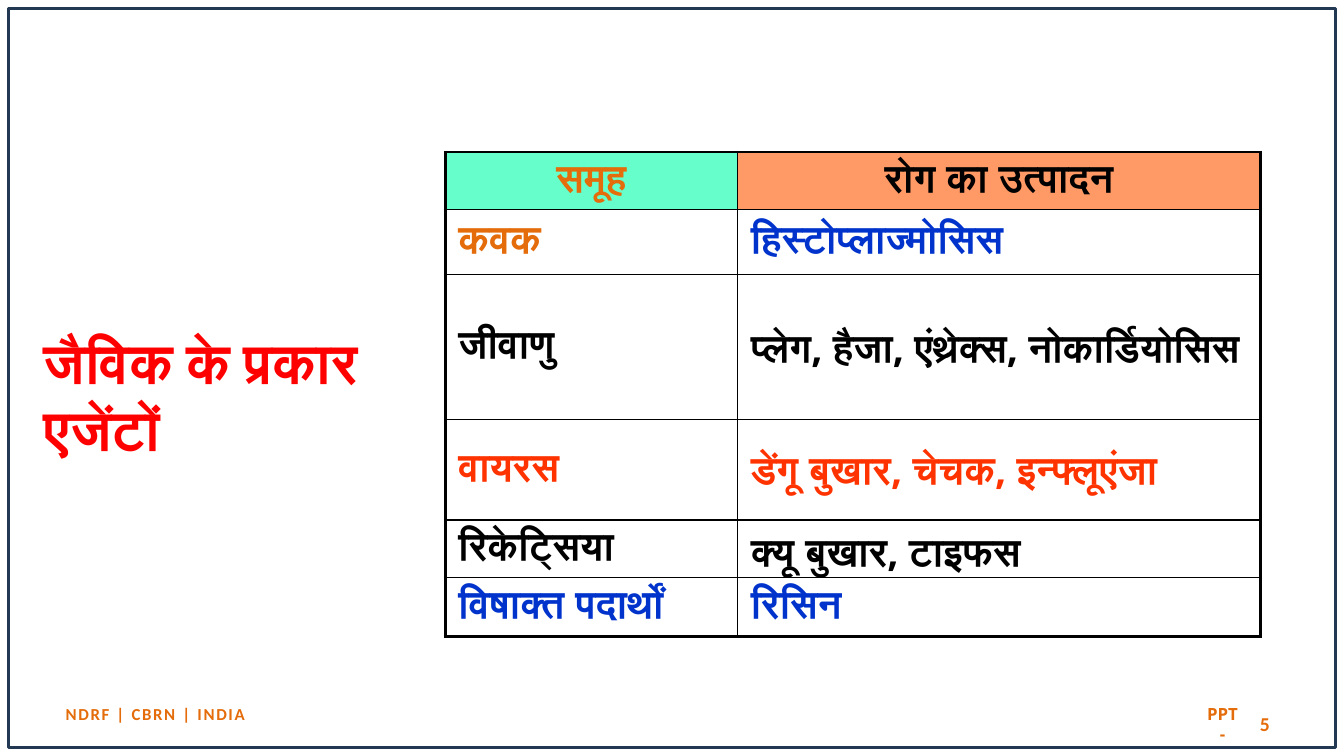
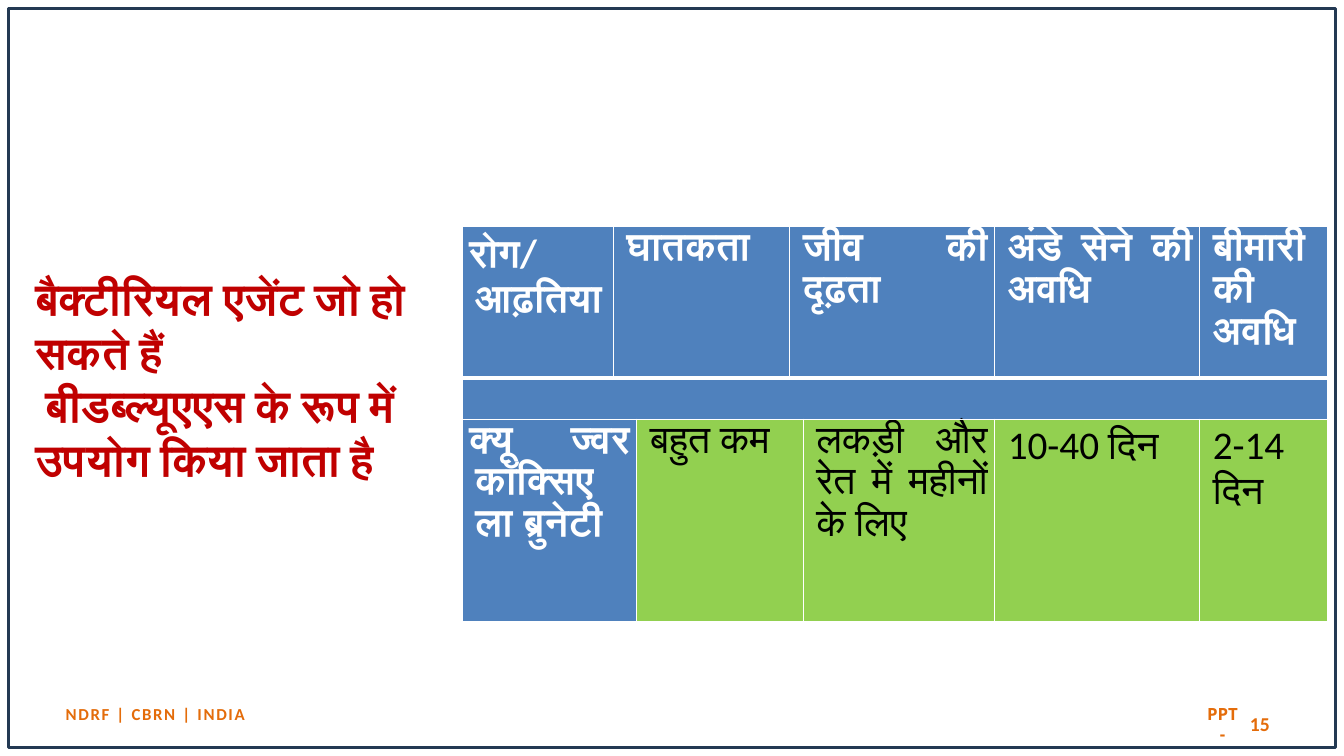
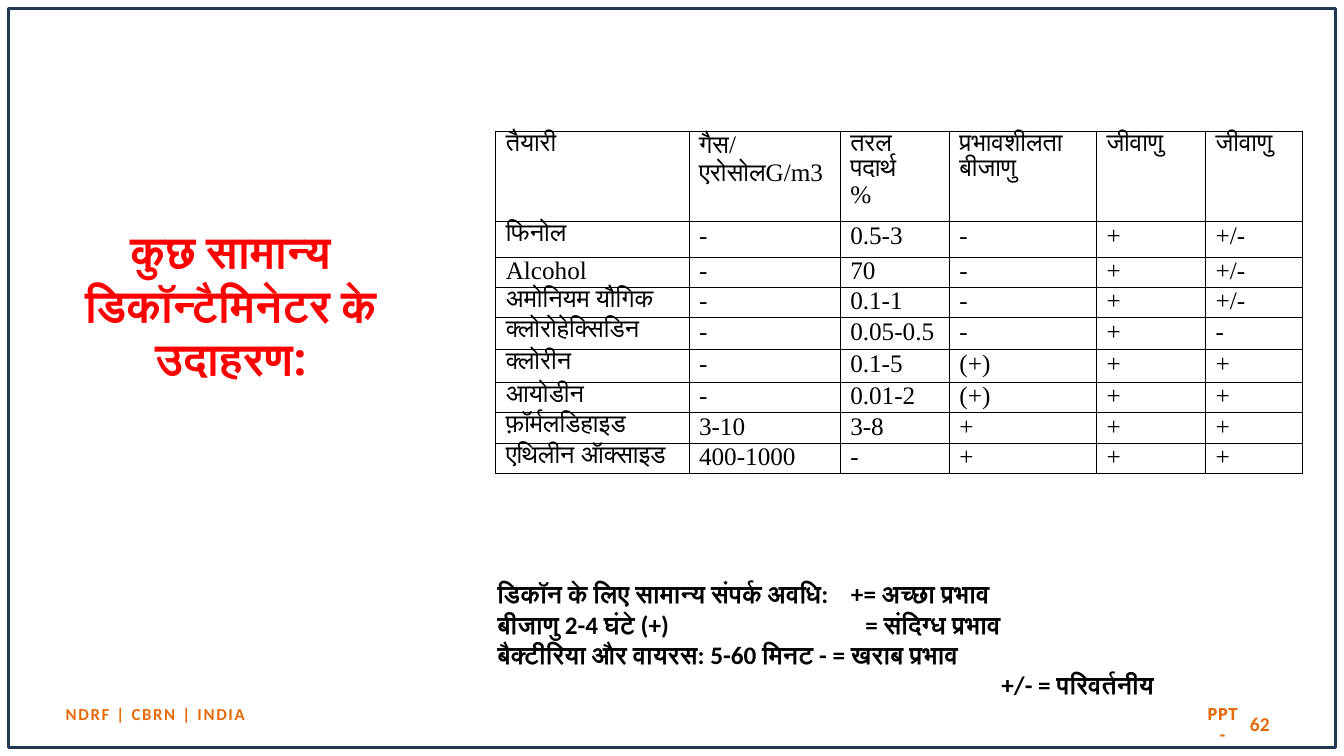
from itertools import product

from lxml import etree
from pptx import Presentation
from pptx import util as u
from pptx.dml.color import RGBColor
from pptx.enum import shapes, text
from pptx.oxml.ns import qn

BLACK = RGBColor(0x00, 0x00, 0x00)
WHITE = RGBColor(0xFF, 0xFF, 0xFF)
NAVY = RGBColor(0x23, 0x39, 0x53)
ORANGE = RGBColor(0xE4, 0x6C, 0x0A)
RED = RGBColor(0xFF, 0x00, 0x00)
MAROON = RGBColor(0xC0, 0x00, 0x00)
SCARLET = RGBColor(0xFF, 0x33, 0x00)
ROYAL = RGBColor(0x00, 0x33, 0xCC)
STEEL = RGBColor(0x4F, 0x81, 0xBD)
LIME = RGBColor(0x92, 0xD0, 0x50)
MINT = RGBColor(0x66, 0xFF, 0xCC)
PEACH = RGBColor(0xFF, 0x99, 0x66)
SANS, BODY, SERIF = "Open Sans", "Calibri", "Times New Roman"
LEFT, MID, RIGHT, JUST = (text.PP_ALIGN.LEFT, text.PP_ALIGN.CENTER,
                          text.PP_ALIGN.RIGHT, text.PP_ALIGN.JUSTIFY)
CENTRE = text.MSO_ANCHOR.MIDDLE

deck = Presentation()
deck.slide_width, deck.slide_height = u.Inches(13.33), u.Inches(7.5)
UNIT = deck.slide_height / 90  # the slide is a grid of 160 by 90 units


def write(para, words, size, ink, font, bold=True, align=LEFT, asian=None):
    """Fill a paragraph; a newline in words becomes a line break."""
    para.alignment = align
    for i, part in enumerate(words.split("\n")):
        if i:
            para.add_line_break()
        run = para.add_run()
        run.text = part
        run.font.size, run.font.bold = u.Pt(size), bold
        run.font.name, run.font.color.rgb = font, ink
        if asian:
            etree.SubElement(run.font._element, qn("a:cs"), typeface=asian)
    return para


def grid(page, left, top, cols, rows, ink, rims):
    """Add a bare table; rims(row, col) gives left, right, top, bottom widths."""
    box = [round(n * UNIT) for n in (left, top, sum(cols), sum(rows))]
    table = page.shapes.add_table(len(rows), len(cols), *box).table
    table.first_row = table.horz_banding = False
    for col, wide in zip(table.columns, cols):
        col.width = round(wide * UNIT)
    for row, high in zip(table.rows, rows):
        row.height = round(high * UNIT)
    for r, c in product(range(len(rows)), range(len(cols))):
        cell = table.cell(r, c)
        cell.fill.background()
        props = cell._tc.get_or_add_tcPr()
        for i, (side, wide) in enumerate(zip("LRTB", rims(r, c))):
            line = etree.Element(qn("a:ln" + side), w=str(u.Pt(wide)))
            fill = etree.SubElement(line, qn("a:solidFill"))
            etree.SubElement(fill, qn("a:srgbClr"), val=str(ink))
            props.insert(i, line)
    return table


# Frame, title and footer of every slide
heads = [
    ("5", "जैविक के प्रकार\nएजेंटों", (4, 32, 40, 30), 40, RED, LEFT),
    ("15", "बैक्टीरियल एजेंट जो हो सकते हैं\n बीडब्ल्यूएएस के रूप में उपयोग किया जाता है",
     (3, 25.5, 50, 39), 32, MAROON, LEFT),
    ("62", "कुछ सामान्य डिकॉन्टैमिनेटर के उदाहरण:", (1, 25.7, 53, 21), 32, RED, MID),
]
pages = []
for num, title, area, size, ink, align in heads:
    page = deck.slides.add_slide(deck.slide_layouts[6])
    pages.append(page)
    for words, place, points, tint, font, side, wrap in [
        (num, (115, 83.7, 37.3, 4.8), 14, ORANGE, BODY, RIGHT, True),
        ("NDRF | CBRN | INDIA", (2, 82.8, 33, 4.4), 12, ORANGE, BODY, MID, True),
        ("PPT -", (142, 84, 7, 4.4), 12, ORANGE, SANS, MID, False),
        (title, area, size, ink, SANS, align, True),
    ]:
        frame = page.shapes.add_textbox(*[round(n * UNIT) for n in place]).text_frame
        frame.word_wrap, frame.vertical_anchor = wrap, CENTRE
        para = write(frame.paragraphs[0], words, points, tint, font, True, side, BODY)
        if words.startswith("NDRF"):
            para.runs[0].font._element.set("spc", "120")
    rim = page.shapes.add_shape(shapes.MSO_SHAPE.RECTANGLE,
                                *[round(n * UNIT) for n in (1, 1, 158, 88)])
    rim.shadow.inherit = False
    rim.fill.background()
    rim.line.color.rgb, rim.line.width = NAVY, u.Pt(2)

# Slide 1: groups and their diseases
groups = [
    ("समूह", ORANGE, "रोग का उत्पादन", BLACK),
    ("कवक", ORANGE, "हिस्टोप्लाज्मोसिस", ROYAL),
    ("जीवाणु", BLACK, "प्लेग, हैजा, एंथ्रेक्स, नोकार्डियोसिस", BLACK),
    ("वायरस", SCARLET, "डेंगू बुखार, चेचक, इन्फ्लूएंजा", SCARLET),
    ("रिकेट्सिया", BLACK, "क्यू बुखार, टाइफस", BLACK),
    ("विषाक्त पदार्थों", ROYAL, "रिसिन", ROYAL),
]
table = grid(pages[0], 53, 18.1, [34.8, 62.2], [5.8, 7.8, 17.2, 12, 6.5, 7.1], BLACK,
             lambda r, c: [2.25 if outer else 1
                           for outer in (c == 0, c == 1, r == 0, r == 5)])
for r, (group, tint, ill, ink) in enumerate(groups):
    for c, (words, shade) in enumerate([(group, tint), (ill, ink)]):
        cell = table.cell(r, c)
        cell.vertical_anchor = CENTRE
        cell.margin_left = cell.margin_right = u.Inches(0.13)
        write(cell.text_frame.paragraphs[0], words, 28, shade, SANS,
              align=LEFT if r else MID)
for c, tint in enumerate([MINT, PEACH]):
    table.cell(0, c).fill.solid()
    table.cell(0, c).fill.fore_color.rgb = tint

# Slide 2: one agent, with cells merged over a seven-column grid
agent = [
    (0, 0, 0, "रोग/\nआढ़तिया"), (0, 1, 2, "घातकता"), (0, 3, 4, "जीव की दृढ़ता"),
    (0, 5, 5, "अंडे सेने की अवधि"), (0, 6, 6, "बीमारी की अवधि"),
    (1, 0, 6, ""),
    (2, 0, 1, "क्यू ज्वर\nकॉक्सिएला ब्रुनेटी"), (2, 2, 3, "बहुत कम"),
    (2, 4, 4, "लकड़ी और रेत में महीनों के लिए"), (2, 5, 5, "10-40 दिन"), (2, 6, 6, "2-14 दिन"),
]
table = grid(pages[1], 55, 27, [18, 2.8, 18.2, 1.6, 22.8, 24.4, 15.2], [18, 4.9, 24.1],
             WHITE, lambda r, c: (1, 1, 3 if r == 1 else 1, 3 if r == 0 else 1))
for r, start, end, words in agent:
    plain = r == 2 and start > 0
    for c in range(start, end + 1):
        table.cell(r, c).fill.solid()
        table.cell(r, c).fill.fore_color.rgb = LIME if plain else STEEL
    cell = table.cell(r, start)
    if end > start:
        cell.merge(table.cell(r, end))
    if words:
        cell.margin_left = cell.margin_right = u.Inches(0.07)
        cell.margin_top = cell.margin_bottom = 0
        para = write(cell.text_frame.paragraphs[0], words, 28, BLACK if plain else WHITE,
                     BODY, not plain, JUST)
        para.line_spacing = 1.07
        hang = u.Inches(0.06)
        para._p.get_or_add_pPr().set("marL", str(hang))
        para._p.get_or_add_pPr().set("indent", str(0 if start else -hang))

# Slide 3: decontaminants and the key to their signs
agents = [
    ("तैयारी", "गैस/एरोसोलG/m3", "तरल पदार्थ\n%", "प्रभावशीलता\nबीजाणु", "जीवाणु", "जीवाणु"),
    ("फिनोल", "-", "0.5-3", "-", "+", "+/-"),
    ("Alcohol", "-", "70", "-", "+", "+/-"),
    ("अमोनियम यौगिक", "-", "0.1-1", "-", "+", "+/-"),
    ("क्लोरोहेक्सिडिन", "-", "0.05-0.5", "-", "+", "-"),
    ("क्लोरीन", "-", "0.1-5", "(+)", "+", "+"),
    ("आयोडीन", "-", "0.01-2", "(+)", "+", "+"),
    ("फ़ॉर्मलडिहाइड", "3-10", "3-8", "+", "+", "+"),
    ("एथिलीन ऑक्साइड", "400-1000", "-", "+", "+", "+"),
]
table = grid(pages[2], 59, 15.6, [23, 18, 13, 17.5, 13, 11.5],
             [9.3, 4.2, 3.4, 3.4, 3.8, 3.9, 3.4, 3.4, 3.4], BLACK,
             lambda r, c: [0.5] * 4)
for r, row in enumerate(agents):
    for c, words in enumerate(row):
        cell = table.cell(r, c)
        cell.margin_top = cell.margin_bottom = 0
        write(cell.text_frame.paragraphs[0], words, 18, BLACK, SERIF, False, JUST)

key = [
    ("डिकॉन के लिए सामान्य संपर्क अवधि:\t+= अच्छा प्रभाव", 42.1),
    ("बीजाणु 2-4 घंटे (+)\t= संदिग्ध प्रभाव", 43.8),
    ("बैक्टीरिया और वायरस: 5-60 मिनट - = खराब प्रभाव", 0),
    ("\t+/- = परिवर्तनीय", 60),
]
area = [round(n * UNIT) for n in (58, 68.3, 100, 15.7)]
frame = pages[2].shapes.add_textbox(*area).text_frame
frame.word_wrap = True
for i, (words, stop) in enumerate(key):
    para = frame.add_paragraph() if i else frame.paragraphs[0]
    if stop:
        tabs = etree.SubElement(para._p.get_or_add_pPr(), qn("a:tabLst"))
        etree.SubElement(tabs, qn("a:tab"), pos=str(round(stop * UNIT)), algn="l")
    write(para, words, 18, BLACK, BODY, asian=BODY)

deck.save("out.pptx")
